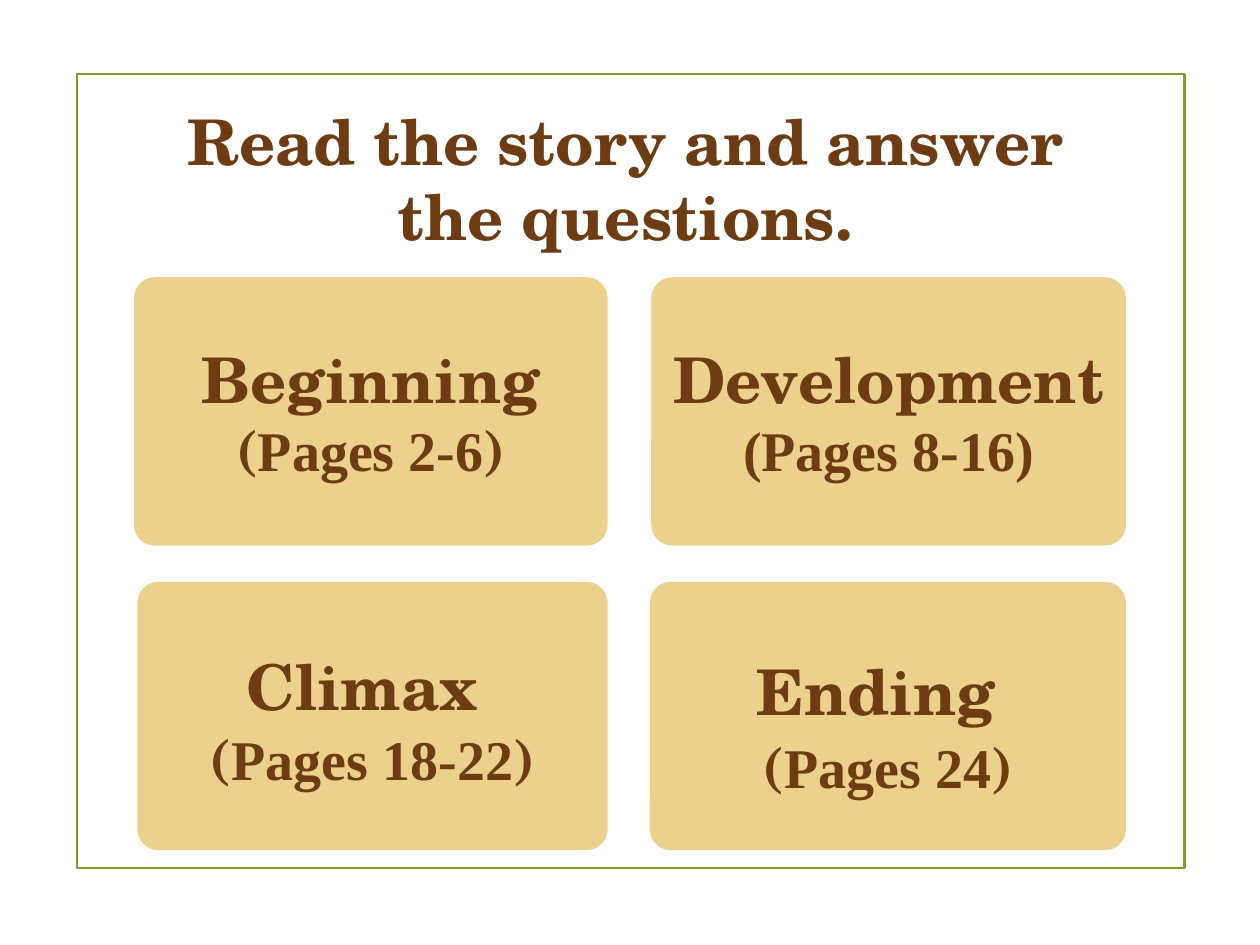
from dataclasses import dataclass

from pptx import Presentation
from pptx.dml.color import RGBColor
from pptx.enum.shapes import MSO_SHAPE
from pptx.enum.text import MSO_ANCHOR, MSO_AUTO_SIZE, PP_ALIGN
from pptx.shapes.autoshape import Shape
from pptx.slide import Slide
from pptx.text.text import _Paragraph as Paragraph
from pptx.util import Cm, Pt


@dataclass(frozen=True)
class Theme:
    text: RGBColor = RGBColor(0x6D, 0x3C, 0x13)
    card: RGBColor = RGBColor(0xEB, 0xD1, 0x8C)
    frame: RGBColor = RGBColor(0x83, 0x99, 0x2A)
    heading_font: str = "TeX Gyre Schola"
    pages_font: str = "Times New Roman"
    heading_size: int = 36
    pages_size: int = 32


THEME = Theme()


@dataclass(frozen=True)
class TextRun:
    text: str
    size: int = THEME.heading_size
    font: str = THEME.heading_font


@dataclass(frozen=True)
class Card:
    left: float
    right: float
    top: float
    lines: list[list[TextRun]]


def pages(text: str) -> list[TextRun]:
    """Page range in the pages font, between brackets in the heading font."""
    return [
        TextRun("(", THEME.pages_size),
        TextRun(text, THEME.pages_size, THEME.pages_font),
        TextRun(")", THEME.pages_size),
    ]


# Card grid in centimetres
LEFT_COLUMN_RIGHT, RIGHT_COLUMN_RIGHT = 12.25, 22.7
TOP_ROW, BOTTOM_ROW = 5.59, 11.73
CARD_HEIGHT = 5.41
CORNER = 0.078

CARDS = [
    Card(2.7, LEFT_COLUMN_RIGHT, TOP_ROW,
         [[TextRun("Beginning "), *pages("Pages 2-6")]]),
    Card(2.77, LEFT_COLUMN_RIGHT, BOTTOM_ROW,
         [[TextRun("Climax"), TextRun(" ", 40)], pages("Pages 18-22")]),
    Card(13.13, RIGHT_COLUMN_RIGHT, TOP_ROW,
         [[TextRun("Development ")],
          [TextRun("(Pages 8-16)", THEME.pages_size, THEME.pages_font)]]),
    Card(13.1, RIGHT_COLUMN_RIGHT, BOTTOM_ROW,
         [[TextRun("Ending"), TextRun(" ", 48)], pages("Pages 24")]),
]


def write_line(paragraph: Paragraph, runs: list[TextRun]) -> None:
    paragraph.alignment = PP_ALIGN.CENTER
    for item in runs:
        run = paragraph.add_run()
        run.text = item.text
        formats = {"name": item.font, "size": Pt(item.size), "bold": True}
        for attribute, value in formats.items():
            setattr(run.font, attribute, value)
        run.font.color.rgb = THEME.text


def write_text(shape: Shape, lines: list[list[TextRun]], **formats) -> None:
    frame = shape.text_frame
    for attribute, value in {"word_wrap": True, **formats}.items():
        setattr(frame, attribute, value)
    for index, runs in enumerate(lines):
        paragraph = frame.add_paragraph() if index else frame.paragraphs[0]
        write_line(paragraph, runs)


def add_frame(slide: Slide) -> None:
    shape = slide.shapes.add_shape(
        MSO_SHAPE.RECTANGLE, Cm(1.55), Cm(1.5), Cm(22.33), Cm(16))
    shape.shadow.inherit = False
    shape.fill.background()
    shape.line.color.rgb = THEME.frame
    shape.line.width = Pt(1.25)


def add_title(slide: Slide) -> None:
    title = slide.shapes.title
    position = {"left": 2.9, "top": 1.93, "width": 19.41, "height": 3.33}
    for attribute, value in position.items():
        setattr(title, attribute, Cm(value))
    write_text(title, [[TextRun("Read the story and answer the questions.")]],
               vertical_anchor=MSO_ANCHOR.TOP,
               auto_size=MSO_AUTO_SIZE.SHAPE_TO_FIT_TEXT)


def add_card(slide: Slide, card: Card) -> None:
    shape = slide.shapes.add_shape(
        MSO_SHAPE.ROUNDED_RECTANGLE, Cm(card.left), Cm(card.top),
        Cm(card.right - card.left), Cm(CARD_HEIGHT))
    shape.adjustments[0] = CORNER
    shape.shadow.inherit = False
    shape.fill.solid()
    shape.fill.fore_color.rgb = THEME.card
    shape.line.fill.background()
    write_text(shape, card.lines, vertical_anchor=MSO_ANCHOR.MIDDLE)


def main() -> None:
    presentation = Presentation()
    presentation.slide_width, presentation.slide_height = Cm(25.4), Cm(19.05)
    title_only = presentation.slide_layouts[5]
    slide = presentation.slides.add_slide(title_only)

    # Border, title, then the four parts of the story
    add_frame(slide)
    add_title(slide)
    for card in CARDS:
        add_card(slide, card)

    presentation.save("out.pptx")


if __name__ == "__main__":
    main()
